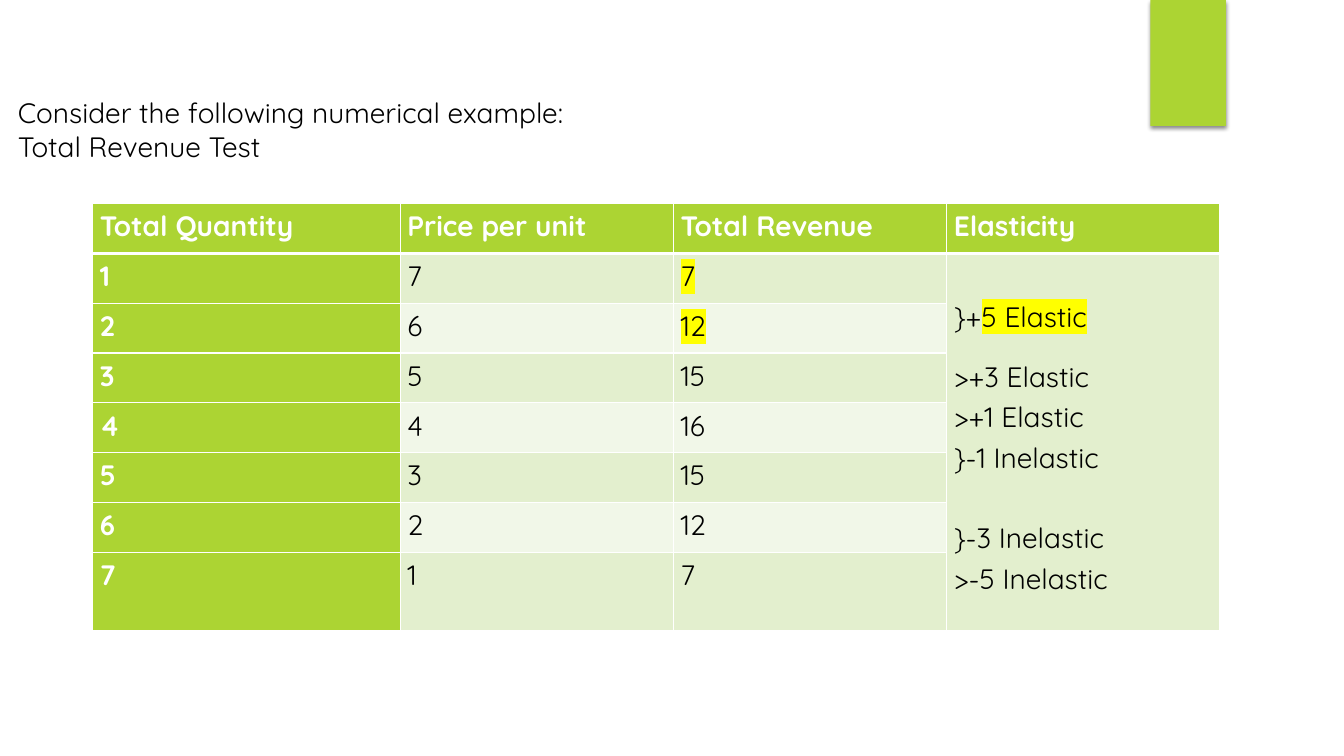
import pptx
import pptx.dml.color
import pptx.enum.shapes
import pptx.enum.text
import pptx.oxml
import pptx.oxml.ns
import pptx.util

Inches, Pt = pptx.util.Inches, pptx.util.Pt
RGBColor = pptx.dml.color.RGBColor
qn = pptx.oxml.ns.qn

GREEN = RGBColor(0xAC, 0xD4, 0x33)
BAND_DARK = RGBColor(0xE3, 0xEF, 0xCE)
BAND_LIGHT = RGBColor(0xF1, 0xF7, 0xE8)
YELLOW = RGBColor(0xFF, 0xFF, 0x00)
WHITE = RGBColor(0xFF, 0xFF, 0xFF)
BLACK = RGBColor(0, 0, 0)

HEADERS = ["Total Quantity", "Price per unit", "Total Revenue", "Elasticity"]
PRICES = [7, 6, 5, 4, 3, 2, 1]
HIGHLIGHTED_QUANTITIES = (1, 2)
# Each line: space before in points, then (text, highlight) runs
ELASTICITY = [
    (0, [("}+", None), ("5 Elastic", YELLOW)]),
    (14.4, [(">+3 Elastic", None)]),
    (0, [(">+1 Elastic", None)]),
    (0, [("}-1 Inelastic", None)]),
    (28.8, [("}-3 Inelastic", None)]),
    (0, [(">-5 Inelastic", None)]),
]


class SlideBuilder:
    font, size = "Quicksand", Pt(20)

    def __init__(self, prs):
        self.slide = prs.slides.add_slide(prs.slide_layouts[6])

    def xml(self, parent, tag, **attrs):
        child = parent.makeelement(qn(tag), attrs)
        parent.append(child)
        return child

    def run(self, p, text, color=BLACK, bold=False, highlight=None):
        r = p.add_run()
        r.text = text
        r.font.name, r.font.size, r.font.bold = self.font, self.size, bold
        r.font.color.rgb = color
        if highlight is not None:
            rPr = r.font.fill._xPr
            hl = rPr.makeelement(qn("a:highlight"), {})
            self.xml(hl, "a:srgbClr", val=str(highlight))
            rPr.find(qn("a:solidFill")).addnext(hl)

    def lines(self, tf, lines, spacing=None, **style):
        for i, (before, runs) in enumerate(lines):
            p = tf.add_paragraph() if i else tf.paragraphs[0]
            p.line_spacing = spacing
            if before:
                p.space_before = Pt(before)
            for text, highlight in runs:
                self.run(p, text, highlight=highlight, **style)

    def block(self, left, top, width, height, color):
        sp = self.slide.shapes.add_shape(
            pptx.enum.shapes.MSO_SHAPE.RECTANGLE,
            Inches(left), Inches(top), Inches(width), Inches(height))
        sp.fill.solid()
        sp.fill.fore_color.rgb = color
        sp.line.fill.background()
        sp.shadow.inherit = False
        effects = sp._element.spPr.find(qn("a:effectLst"))
        shadow = self.xml(effects, "a:outerShdw", blurRad=str(Pt(3)),
                          dist=str(Pt(2)), dir="5400000", rotWithShape="0")
        clr = self.xml(shadow, "a:srgbClr", val=str(BLACK))
        self.xml(clr, "a:alpha", val="45000")

    def text(self, left, top, width, height, lines):
        sp = self.slide.shapes.add_textbox(
            Inches(left), Inches(top), Inches(width), Inches(height))
        tf = sp.text_frame
        tf.word_wrap = True
        tf.margin_top = Inches(0.04)
        tf.vertical_anchor = pptx.enum.text.MSO_ANCHOR.TOP
        self.lines(tf, [(0, [(line, None)]) for line in lines])

    def table(self, left, top, widths, heights):
        frame = self.slide.shapes.add_table(
            len(heights), len(widths), Inches(left), Inches(top),
            Inches(sum(widths)), Inches(sum(heights)))
        table = frame.table
        table.first_row = table.horz_banding = False
        for column, width in zip(table.columns, widths):
            column.width = Inches(width)
        for row, height in zip(table.rows, heights):
            row.height = Inches(height)
        return table

    def cell(self, cell, fill, lines, top_line=1, bottom_line=1, **style):
        cell.margin_left = cell.margin_right = Inches(0.07)
        cell.margin_top = cell.margin_bottom = 0
        tcPr = cell._tc.get_or_add_tcPr()
        for side, width in zip("LRTB", (1, 1, top_line, bottom_line)):
            ln = self.xml(tcPr, "a:ln" + side, w=str(Pt(width)))
            solid = self.xml(ln, "a:solidFill")
            self.xml(solid, "a:srgbClr", val=str(WHITE))
        cell.fill.solid()
        cell.fill.fore_color.rgb = fill
        self.lines(cell.text_frame, lines, spacing=1.15, **style)


def main():
    prs = pptx.Presentation()
    prs.slide_width, prs.slide_height = Inches(13.33), Inches(7.5)
    s = SlideBuilder(prs)

    # Corner accent
    s.block(11.41, 0, 0.75, 1.25, GREEN)

    # Revenue table: header row
    row_height = (4.24 - 0.78) / 7
    table = s.table(0.92, 2.02, [3.05] + [2.71] * 3, [row_height] * 7 + [0.78])
    for col, header in enumerate(HEADERS):
        s.cell(table.cell(0, col), GREEN, [(0, [(header, None)])],
               bottom_line=3, color=WHITE, bold=True)

    # Quantity, price and revenue rows
    for quantity, price in enumerate(PRICES, start=1):
        band = BAND_DARK if quantity % 2 else BAND_LIGHT
        mark = YELLOW if quantity in HIGHLIGHTED_QUANTITIES else None
        top_line = 3 if quantity == 1 else 1
        s.cell(table.cell(quantity, 0), GREEN, [(0, [(str(quantity), None)])],
               top_line, color=WHITE, bold=True)
        s.cell(table.cell(quantity, 1), band, [(0, [(str(price), None)])],
               top_line)
        s.cell(table.cell(quantity, 2), band,
               [(0, [(str(quantity * price), mark)])], top_line)

    # Elasticity column, merged over all quantities
    elasticity = table.cell(1, 3)
    elasticity.merge(table.cell(len(PRICES), 3))
    s.cell(elasticity, BAND_DARK, ELASTICITY, top_line=3)
    elasticity.margin_top = Inches(0.4)

    # Introduction
    s.text(0.08, 0.91, 13.14, 1.11,
           ["Consider the following numerical example:", "Total Revenue Test"])

    prs.save("out.pptx")


if __name__ == "__main__":
    main()
